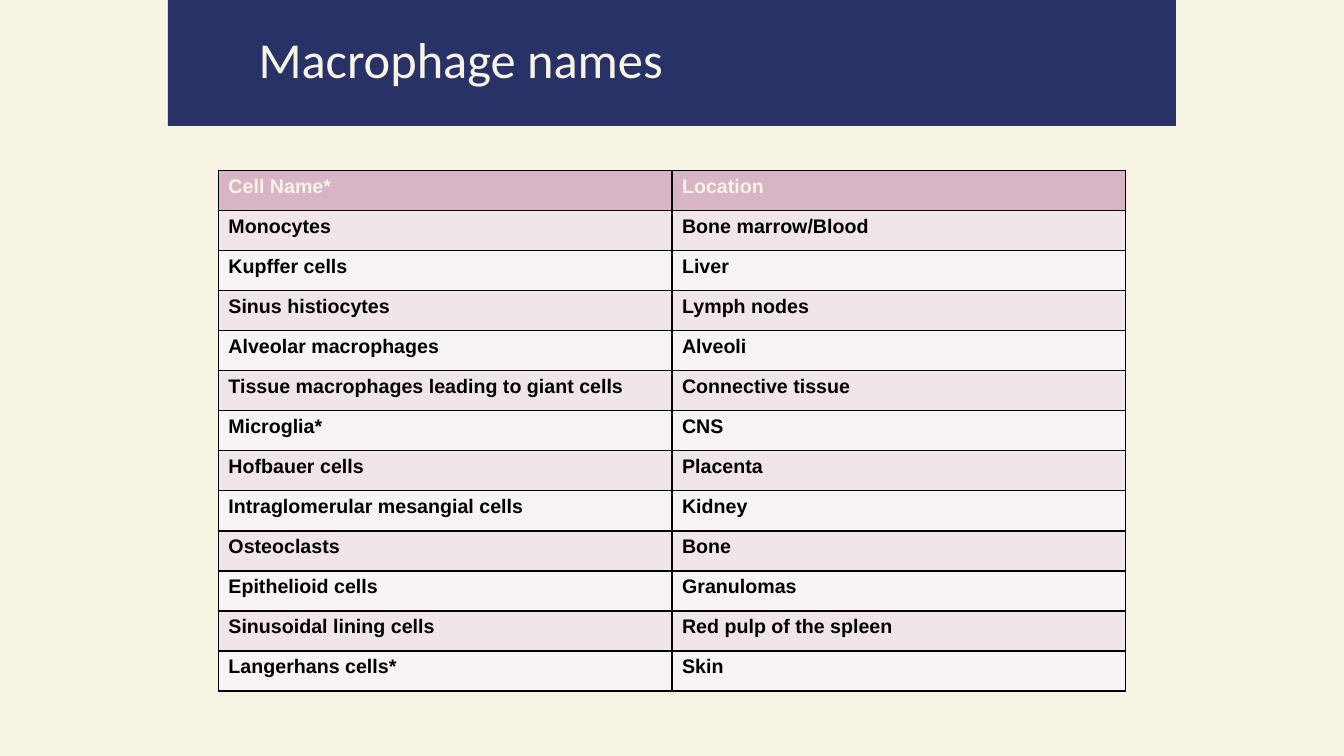
from pptx import Presentation, util as u
from pptx.dml.color import RGBColor
from pptx.enum import shapes, text
from pptx.oxml import parse_xml
from pptx.oxml.ns import nsdecls

NAVY, CREAM, BLACK = "293267", "F8F4E4", "000000"
HEAD, BANDS = "D7B5C6", ("F0E5EA", "F8F3F5")
CELLS = [
    ("Cell Name*", "Location"),
    ("Monocytes", "Bone marrow/Blood"),
    ("Kupffer cells", "Liver"),
    ("Sinus histiocytes", "Lymph nodes"),
    ("Alveolar macrophages", "Alveoli"),
    ("Tissue macrophages leading to giant cells", "Connective tissue"),
    ("Microglia*", "CNS"),
    ("Hofbauer cells", "Placenta"),
    ("Intraglomerular mesangial cells", "Kidney"),
    ("Osteoclasts", "Bone"),
    ("Epithelioid cells", "Granulomas"),
    ("Sinusoidal lining cells", "Red pulp of the spleen"),
    ("Langerhans cells*", "Skin"),
]


def paint(fill, tone):
    fill.solid()
    fill.fore_color.rgb = RGBColor.from_string(tone)


class Deck:
    cols, rows = 80, 45

    def __init__(self):
        self.file = Presentation()
        self.file.slide_width = u.Inches(13.33)
        self.file.slide_height = u.Inches(7.5)
        self.page = self.file.slides.add_slide(self.file.slide_layouts[6])
        paint(self.page.background.fill, CREAM)

    def place(self, left, top, wide, high):
        col = self.file.slide_width / self.cols
        row = self.file.slide_height / self.rows
        return [round(n) for n in (left * col, top * row, wide * col, high * row)]

    def label(self, para, words, size, font, tone, bold=False):
        run = para.add_run()
        run.text = words
        run.font.size = u.Pt(size)
        run.font.name = font
        run.font.bold = bold
        paint(run.font.fill, tone)

    def band(self, area, tone):
        box = self.page.shapes.add_shape(
            shapes.MSO_SHAPE.RECTANGLE, *self.place(*area))
        box.shadow.inherit = False
        paint(box.fill, tone)
        box.line.fill.background()

    def title(self, area, words):
        frame = self.page.shapes.add_textbox(*self.place(*area)).text_frame
        frame.word_wrap = True
        frame.auto_size = text.MSO_AUTO_SIZE.SHAPE_TO_FIT_TEXT
        self.label(frame.paragraphs[0], words, 36, "Calibri", CREAM)

    def edge(self, cell):
        props = cell._tc.get_or_add_tcPr()
        for spot, side in enumerate(("lnL", "lnR", "lnT", "lnB")):
            props.insert(spot, parse_xml(
                f'<a:{side} {nsdecls("a")} w="{u.Pt(1)}"><a:solidFill>'
                f'<a:srgbClr val="{BLACK}"/></a:solidFill></a:{side}>'))

    def table(self, area, data):
        grid = self.page.shapes.add_table(
            len(data), len(data[0]), *self.place(*area)).table
        for i, line in enumerate(data):
            fill, ink = (BANDS[(i - 1) % 2], BLACK) if i else (HEAD, CREAM)
            for j, words in enumerate(line):
                cell = grid.cell(i, j)
                paint(cell.fill, fill)
                self.edge(cell)
                self.label(cell.text_frame.paragraphs[0],
                           words, 14, "Arial", ink, True)


def main():
    deck = Deck()
    deck.table((13, 10.15, 54, 31), CELLS)
    deck.band((10, 0, 60, 7.5), NAVY)
    deck.title((14.8, 1.4, 36.5, 4.25), "Macrophage names")
    deck.file.save("out.pptx")


if __name__ == "__main__":
    main()
